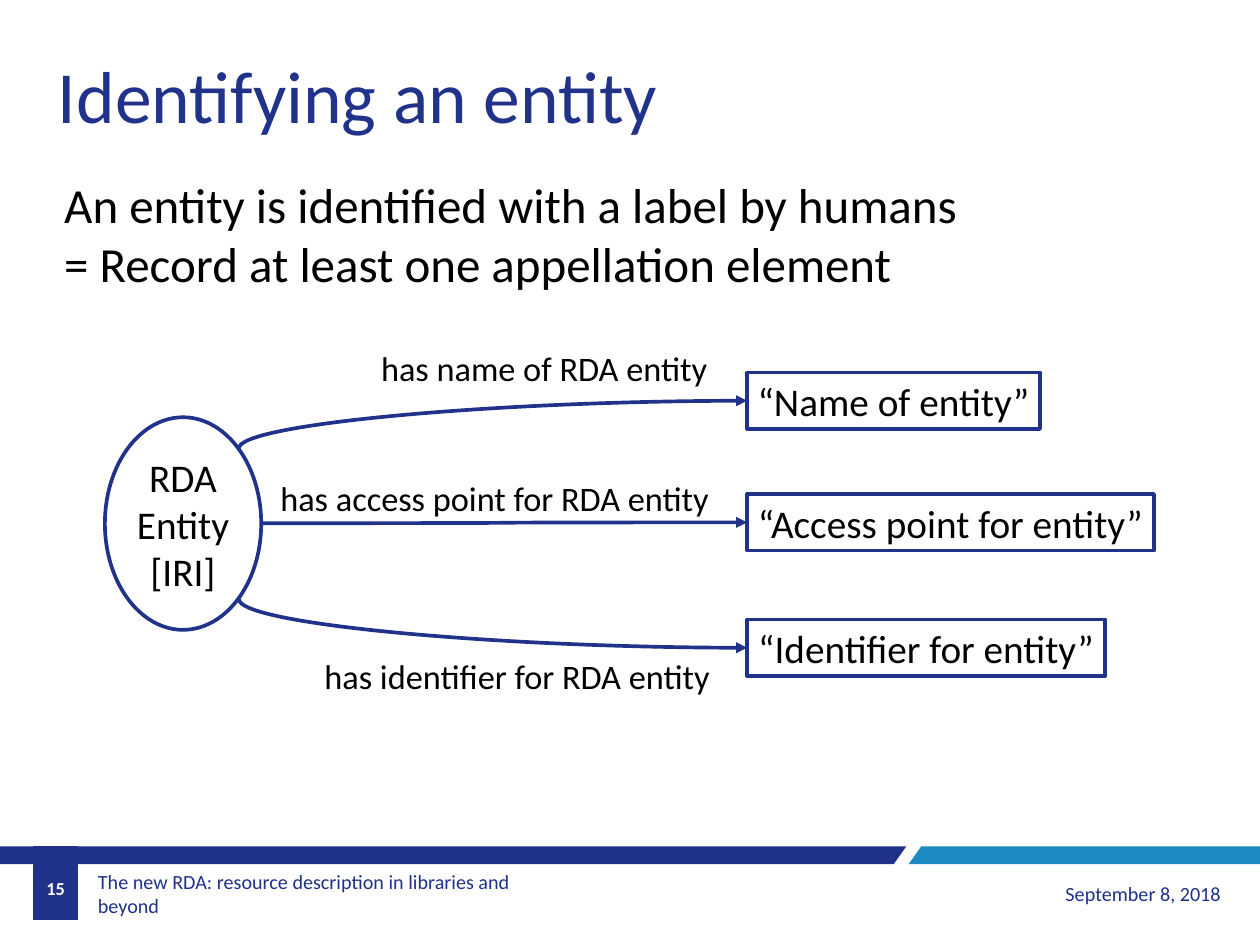
from lxml.etree import SubElement
from pptx import Presentation
from pptx.dml.color import RGBColor
from pptx.enum.shapes import MSO_CONNECTOR, MSO_SHAPE
from pptx.enum.text import MSO_ANCHOR, PP_ALIGN
from pptx.oxml.ns import qn
from pptx.util import Cm, Pt

NAVY = RGBColor(0x21, 0x32, 0x8A)
BAR_NAVY = RGBColor(0x20, 0x31, 0x89)
BAR_BLUE = RGBColor(0x1D, 0x8B, 0xC1)
BLACK = RGBColor(0, 0, 0)
WHITE = RGBColor(0xFF, 0xFF, 0xFF)

WIDTH, HEIGHT = 36.27, 27.2
BAR_TOP, BAR_BOTTOM = 24.36, 24.87
BOX_LEFT, BOX_HEIGHT = 21.51, 1.63


def write_text(shape, text, size, color=BLACK, bold=False, align=PP_ALIGN.LEFT,
               anchor=MSO_ANCHOR.TOP, wrap=False, inset=(0.25, 0.13)):
    """Fill the shape with one paragraph per line of text; inset is (sides, top and bottom)."""
    frame = shape.text_frame
    frame.word_wrap = wrap
    frame.vertical_anchor = anchor
    frame.margin_left = frame.margin_right = Cm(inset[0])
    frame.margin_top = frame.margin_bottom = Cm(inset[1])
    frame.text = text
    for paragraph in frame.paragraphs:
        paragraph.alignment = align
        font = paragraph.font
        font.name, font.size, font.bold = "Calibri", Pt(size), bold
        font.color.rgb = color


class SlideBuilder:
    def __init__(self, slide, line_color=NAVY, line_width=3):
        self.slide = slide
        self.line_color = line_color
        self.line_width = Pt(line_width)

    def text(self, left, top, width, height, text, **text_format):
        box = self.slide.shapes.add_textbox(Cm(left), Cm(top), Cm(width), Cm(height))
        write_text(box, text, **text_format)

    def node(self, kind, left, top, width, height, text):
        """Add an outlined white shape with centred text."""
        shape = self.slide.shapes.add_shape(kind, Cm(left), Cm(top), Cm(width), Cm(height))
        shape.shadow.inherit = False
        shape.fill.solid()
        shape.fill.fore_color.rgb = WHITE
        shape.line.color.rgb = self.line_color
        shape.line.width = self.line_width
        write_text(shape, text, size=32, align=PP_ALIGN.CENTER, anchor=MSO_ANCHOR.MIDDLE)

    def band(self, points, color):
        """Add a filled polygon without outline."""
        corners = [(Cm(x), Cm(y)) for x, y in points]
        builder = self.slide.shapes.build_freeform(*corners[0])
        builder.add_line_segments(corners[1:], close=True)
        shape = builder.convert_to_shape()
        shape.shadow.inherit = False
        shape.fill.solid()
        shape.fill.fore_color.rgb = color
        shape.line.fill.background()

    def curve(self, tip, end, preset):
        """Add a curve that leaves the arrow tip horizontally."""
        connector = self.slide.shapes.add_connector(
            MSO_CONNECTOR.CURVE, *(Cm(value) for value in tip + end))
        connector.line.color.rgb = self.line_color
        connector.line.width = self.line_width
        properties = connector._element.spPr
        properties.find(qn("a:prstGeom")).set("prst", preset)
        SubElement(properties.find(qn("a:ln")), qn("a:headEnd"), type="triangle")
        SubElement(properties, qn("a:effectLst"))


def add_footer(builder):
    builder.band([(0, BAR_TOP), (26.09, BAR_TOP), (25.73, BAR_BOTTOM), (0, BAR_BOTTOM)], BAR_NAVY)
    builder.band([(26.52, BAR_TOP), (WIDTH, BAR_TOP), (WIDTH, BAR_BOTTOM), (26.16, BAR_BOTTOM)],
                 BAR_BLUE)
    builder.band([(0.94, BAR_TOP), (2.26, BAR_TOP), (2.26, 26.49), (0.94, 26.49)], BAR_NAVY)
    middle = {"anchor": MSO_ANCHOR.MIDDLE, "wrap": True}
    builder.text(2.64, 25.02, 14.02, 1.4,
                 "The new RDA: resource description in libraries and beyond",
                 size=16.4, color=BAR_NAVY, inset=(0.18, 0.1), **middle)
    builder.text(26.09, 25.02, 9.3, 1.4, "September 8, 2018",
                 size=16.4, color=BAR_NAVY, align=PP_ALIGN.RIGHT, **middle)
    builder.text(0.94, BAR_BOTTOM, 1.32, 1.4, "15",
                 size=14.9, color=WHITE, bold=True, align=PP_ALIGN.CENTER, **middle)


def add_diagram(builder):
    builder.node(MSO_SHAPE.OVAL, 3.02, 12.01, 4.5, 6.12, "RDA\nEntity\n[IRI]")
    # box text, top, width; label text, left, top, width; curve end on the oval, preset
    relations = [
        ("“Name of entity”", 10.72, 8.43,
         "has name of RDA entity", 10.72, 9.86, 10.01, (6.88, 12.9), "curvedConnector2"),
        ("“Access point for entity”", 14.22, 11.71,
         "has access point for RDA entity", 7.82, 13.61, 13, (7.52, 15.06), "curvedConnector3"),
        ("“Identifier for entity”", 17.83, 10.31,
         "has identifier for RDA entity", 9.09, 18.72, 11.73, (6.88, 17.25), "curvedConnector2"),
    ]
    for value, top, width, label, label_left, label_top, label_width, end, preset in relations:
        builder.node(MSO_SHAPE.RECTANGLE, BOX_LEFT, top, width, BOX_HEIGHT, value)
        builder.curve((BOX_LEFT, top + BOX_HEIGHT / 2), end, preset)
        builder.text(label_left, label_top, label_width, 1.45, label, size=28)


def main():
    presentation = Presentation()
    presentation.slide_width, presentation.slide_height = Cm(WIDTH), Cm(HEIGHT)
    builder = SlideBuilder(presentation.slides.add_slide(presentation.slide_layouts[6]))
    add_footer(builder)
    builder.text(1.42, 1.32, 17.98, 2.82, "Identifying an entity", size=60, color=NAVY)
    builder.text(1.6, 4.9, 26.47, 3.68,
                 "An entity is identified with a label by humans\n"
                 "= Record at least one appellation element", size=40)
    add_diagram(builder)
    presentation.save("out.pptx")


if __name__ == "__main__":
    main()
